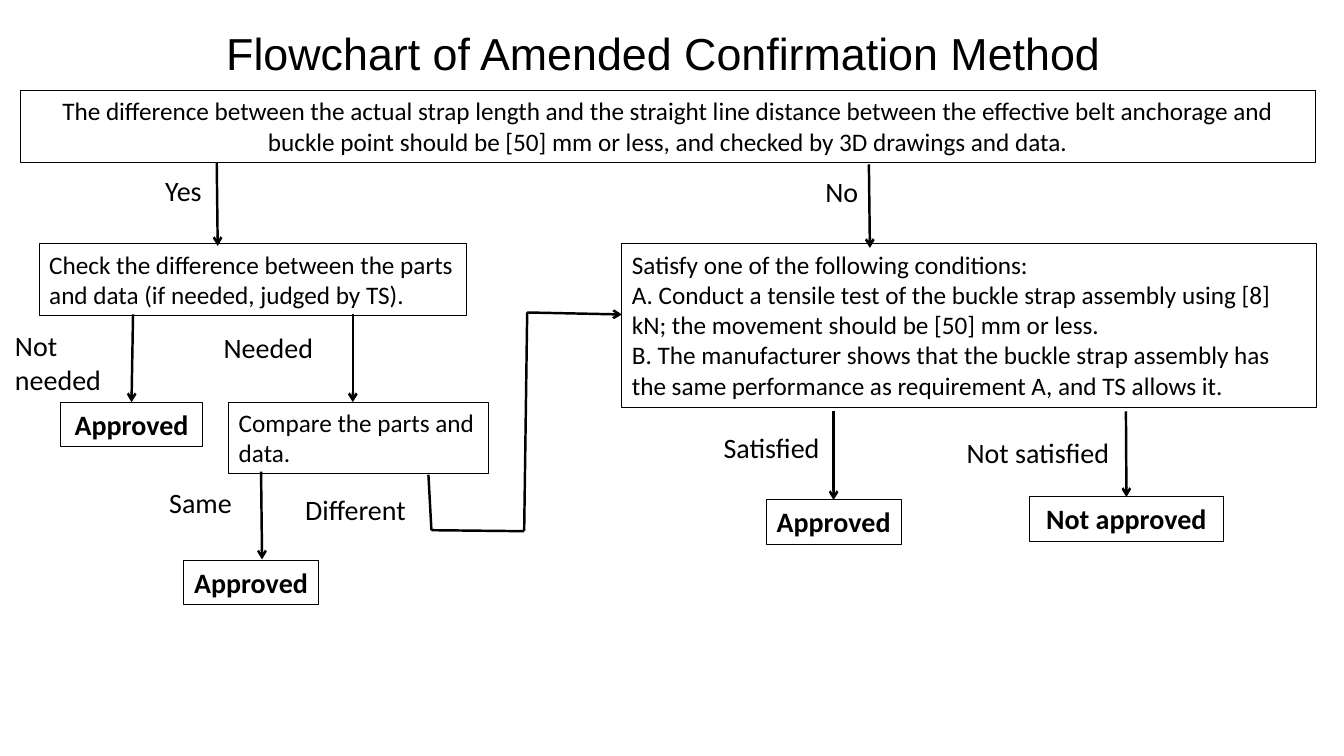
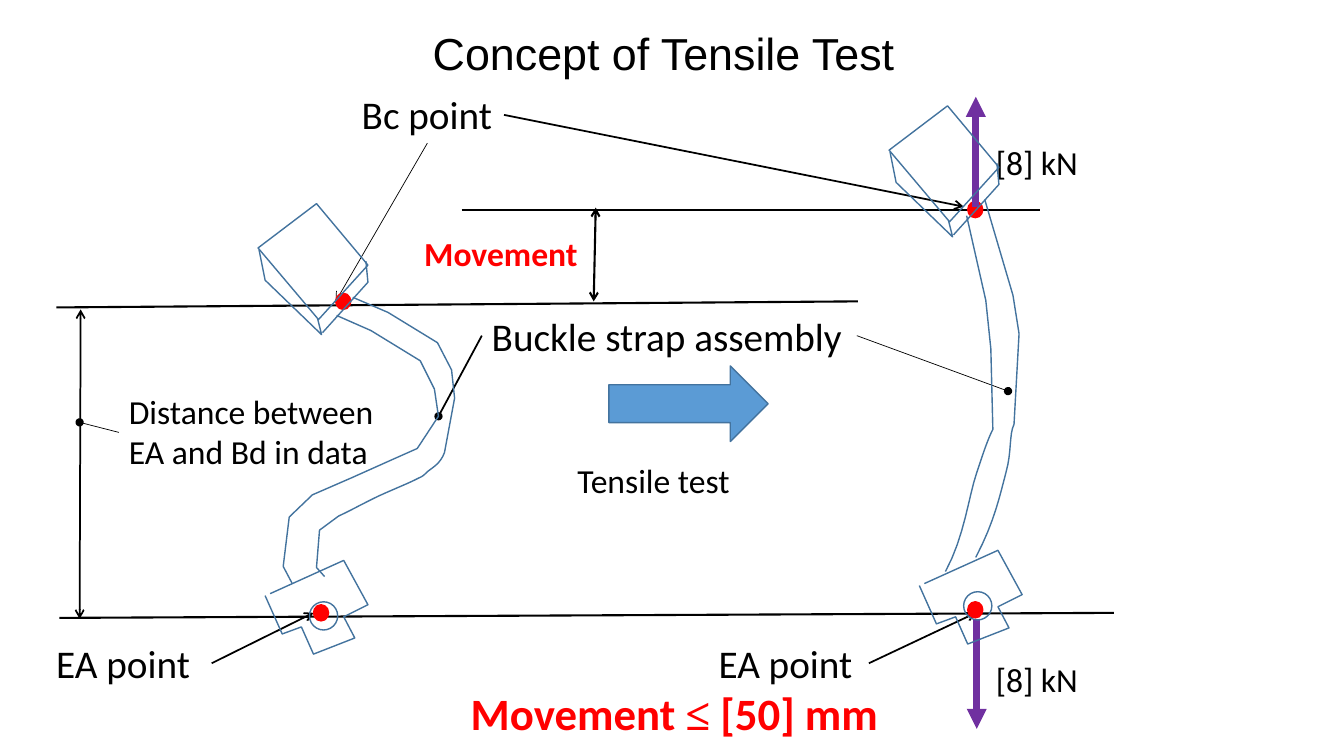
from lxml import etree
from pptx import Presentation
from pptx import util as u
from pptx.dml import color
from pptx.enum import shapes, text
from pptx.oxml import ns

CELL = u.Inches(0.1)
SLIDE_COLUMNS, SLIDE_ROWS = 133.33, 75
TITLE_AREA = (0, 2, 131.7, 6.5)
CURVE_STEPS = 8
COLORS = {
    "ink": "000000",
    "alert": "FF0000",
    "outline": "43739E",
    "progress": "5B9BD5",
    "force": "7030A0",
}
FONTS = {
    "title": {"name": "Arial", "size": u.Pt(32)},
    "step": {"name": "Calibri", "size": u.Pt(18)},
    "answer": {"name": "Calibri", "size": u.Pt(20)},
    "result": {"name": "Calibri", "size": u.Pt(20), "bold": True},
    "note": {"name": "Calibri", "size": u.Pt(24)},
    "part": {"name": "Calibri", "size": u.Pt(28)},
    "movement": {"name": "Calibri", "size": u.Pt(24), "bold": True},
    "limit": {"name": "Calibri", "size": u.Pt(32), "bold": True},
    "sign": {"name": "Times New Roman", "size": u.Pt(32), "bold": True},
}
TOP_FRAME = {"vertical_anchor": text.MSO_ANCHOR.TOP}

BUCKLE = [
    [(25.6, 24.6), (31.6, 31.7), (36.5, 26.3), (31.4, 20.2), (25.6, 24.6)],
    [(25.7, 24.8), (26.3, 27.8), (31.9, 33.2), (31.5, 31.6)],
    [(32, 33), (36.5, 28), (36.3, 25.9)],
]
ANCHOR = [
    (26.8, 58.9), (34.1, 55.6), (36.5, 60), (34.1, 61.2), (35.2, 63.3),
    (31.1, 64.9), (29.9, 62.2), (28, 62.9), (26.3, 59.1),
]
SLACK_STRAP = [
    [(33.4, 31.3), (36.8, 32.8), (41.7, 35.8), (43.1, 38.6), (43.5, 41.3),
     (41.4, 44.5), (38.7, 45.7), (34.9, 47.4), (31, 49.1), (28.7, 51.3),
     (28.1, 56.2), (29, 57.9)],
    [(35, 29.5), (38.5, 31), (43.4, 34), (44.8, 36.7), (45.1, 39.5),
     (44.1, 44.9), (43.7, 46, 42.9, 46.4, 42.4, 46.8),
     (41.9, 47.3, 42, 47.2, 41.2, 47.6), (40.4, 48, 38.9, 48.6, 37.6, 49.2),
     (36.3, 49.8, 34.9, 50.6, 33.6, 51.2), (31.7, 52.6), (31.4, 56.3),
     (32.2, 57.2)],
]
TAUT_STRAP = [
    [(95.9, 21.4), (97.8, 29.8), (98.3, 34.6), (98.5, 42.6),
     (98, 43.6, 97.7, 44.5, 96.9, 46.9), (96.1, 49.2, 95.7, 53.2, 93.8, 56.7)],
    [(97.7, 19.8), (100.5, 29.3), (101.1, 33.1), (100.6, 42.1),
     (100.1, 43.1, 100.4, 44.7, 99.8, 46.9),
     (99.2, 49.1, 98.7, 51.7, 96.8, 55.3)],
]


def cells(*counts):
    return [u.Emu(round(count * CELL)) for count in counts]


def assign(target, values):
    for key, value in values.items():
        setattr(target, key, value)


def rgb(name):
    return color.RGBColor.from_string(COLORS[name])


def write(frame, paragraphs, style, ink="ink", align=text.PP_ALIGN.LEFT):
    for index, content in enumerate(paragraphs):
        paragraph = frame.add_paragraph() if index else frame.paragraphs[0]
        paragraph.alignment = align
        pieces = [(content, style)] if isinstance(content, str) else content
        for words, font_name in pieces:
            run = paragraph.add_run()
            run.text = words
            assign(run.font, FONTS[font_name])
            run.font.color.rgb = rgb(ink)


def paint(figure, fill, line, weight):
    figure.shadow.inherit = False
    if fill:
        figure.fill.solid()
        figure.fill.fore_color.rgb = rgb(fill)
    else:
        figure.fill.background()
    figure.line.color.rgb = rgb(line)
    figure.line.width = u.Pt(weight)


def titled_slide(deck, layout, heading):
    slide = deck.slides.add_slide(layout)
    title = slide.shapes.title
    assign(title.text_frame, {
        "vertical_anchor": text.MSO_ANCHOR.MIDDLE,
        "auto_size": text.MSO_AUTO_SIZE.NONE,
    })
    write(title.text_frame, [heading], "title", align=text.PP_ALIGN.CENTER)
    return slide


def preset(slide, kind, area, fill=None, line="outline", weight=1):
    figure = slide.shapes.add_shape(kind, *cells(*area))
    paint(figure, fill, line, weight)
    return figure


def box(slide, area, paragraphs, style="step", align=text.PP_ALIGN.LEFT):
    step = preset(slide, shapes.MSO_SHAPE.RECTANGLE, area, None, "ink", 0.75)
    assign(step.text_frame, {**TOP_FRAME, "word_wrap": True})
    write(step.text_frame, paragraphs, style, align=align)
    return step


def result(slide, area, words):
    return box(slide, area, [words], "result", text.PP_ALIGN.CENTER)


def label(slide, area, paragraphs, style="answer", ink="ink", wrap=True,
          align=text.PP_ALIGN.LEFT):
    caption = slide.shapes.add_textbox(*cells(*area))
    assign(caption.text_frame, {**TOP_FRAME, "word_wrap": wrap})
    write(caption.text_frame, paragraphs, style, ink, align)


def link(slide, start, end, weight=1.75, tail=None, head=None, ink="ink", target=None):
    connector = slide.shapes.add_connector(
        shapes.MSO_CONNECTOR.STRAIGHT, *cells(*start, *end))
    connector.line.color.rgb = rgb(ink)
    connector.line.width = u.Pt(weight)
    properties = connector.element.spPr
    outline = properties.find(ns.qn("a:ln"))
    for tag, kind in (("a:headEnd", head), ("a:tailEnd", tail)):
        if kind:
            etree.SubElement(outline, ns.qn(tag), type=kind)
    etree.SubElement(properties, ns.qn("a:effectLst"))
    if target:
        connector.end_connect(target, 0)


def curve(start, controls):
    x1, y1, x2, y2, x3, y3 = controls
    for step in range(1, CURVE_STEPS + 1):
        t = step / CURVE_STEPS
        weights = ((1 - t) ** 3, 3 * t * (1 - t) ** 2, 3 * t * t * (1 - t), t ** 3)
        yield tuple(sum(w * p for w, p in zip(weights, axis))
                    for axis in ((start[0], x1, x2, x3), (start[1], y1, y2, y3)))


def sketch(slide, outline, shift=(0, 0)):
    points = [outline[0]]
    for segment in outline[1:]:
        points.extend([segment] if len(segment) == 2 else curve(points[-1], segment))
    placed = [cells(x + shift[0], y + shift[1]) for x, y in points]
    builder = slide.shapes.build_freeform(*placed[0], scale=1.0)
    builder.add_line_segments(placed[1:], close=False)
    paint(builder.convert_to_shape(), None, "outline", 1)


def assembly(slide, strap, buckle_shift, anchor_shift, hole):
    for outline in BUCKLE:
        sketch(slide, outline, buckle_shift)
    for outline in strap:
        sketch(slide, outline)
    sketch(slide, ANCHOR, anchor_shift)
    preset(slide, shapes.MSO_SHAPE.OVAL, (*hole, 2.8, 2.8))


def flowchart(slide):
    box(slide, (2, 9, 128.5, 7.1), [
        "The difference between the actual strap length and the straight line "
        "distance between the effective belt anchorage and buckle point should "
        "be [50] mm or less, and checked by 3D drawings and data.",
    ], align=text.PP_ALIGN.CENTER)
    box(slide, (3.9, 24.2, 42.4, 7.1), [
        "Check the difference between the parts and data (if needed, judged by TS).",
    ])
    box(slide, (22.7, 39.9, 25.8, 7.1), ["Compare the parts and data."])
    box(slide, (61.7, 24.2, 68.9, 16.2), [
        "Satisfy one of the following conditions:",
        "A. Conduct a tensile test of the buckle strap assembly using [8] kN; "
        "the movement should be [50] mm or less.",
        "B. The manufacturer shows that the buckle strap assembly has the same "
        "performance as requirement A, and TS allows it.",
    ])
    unchecked = result(slide, (6, 39.9, 14.1, 4.4), "Approved")
    result(slide, (18.2, 55.6, 13.4, 4.4), "Approved")
    satisfied = result(slide, (76, 49.6, 13.4, 4.4), "Approved")
    rejected = result(slide, (102.1, 49.3, 19.3, 4.4), "Not approved")

    for words, area, wrap in (
        ("Yes", (15.4, 16.7, 5.7, 4.4), False),
        ("No", (80.9, 16.8, 5.3, 4.4), False),
        ("Not needed", (0.5, 32.1, 14.8, 7.7), True),
        ("Needed", (21.2, 32.3, 13.2, 4.4), True),
        ("Same", (15.8, 47.7, 13.3, 4.4), True),
        ("Different", (29.3, 48.4, 13.3, 4.4), True),
        ("Satisfied", (70.8, 42.2, 13.3, 4.4), True),
        ("Not satisfied", (94.9, 42.7, 16.7, 4.4), True),
    ):
        label(slide, area, [words], wrap=wrap)

    for start, end, target in (
        ((21.5, 16.1), (21.6, 24.4), None),
        ((86.2, 16.3), (86.3, 24.6), None),
        ((13.2, 31.2), (13.2, 39.9), unchecked),
        ((35, 31.2), (35, 39.9), None),
        ((25.9, 46.8), (26, 55.5), None),
        ((82.7, 40.8), (82.7, 49.6), satisfied),
        ((111.7, 40.8), (111.7, 49.3), rejected),
        ((52.3, 31), (61.7, 31.2), None),
    ):
        link(slide, start, end, tail="arrow", target=target)
    detour = [(42.5, 47.1), (42.8, 52.6), (52, 52.7), (52.3, 31)]
    for start, end in zip(detour, detour[1:]):
        link(slide, start, end)


def tensile_test(slide):
    for words, area, style, wrap in (
        (["EA point"], (4.6, 62.9, 16.4, 5.7), "part", True),
        (["EA point"], (70.3, 62.9, 15.8, 5.7), "part", True),
        (["Bc point"], (34.9, 8.5, 15.1, 5.7), "part", False),
        (["Buckle strap assembly"], (47.8, 30.5, 37.1, 5.7), "part", False),
        (["Tensile test"], (56.3, 45.1, 17.3, 5), "note", False),
        (["[8] kN"], (97.8, 13.6, 10.2, 5), "note", False),
        (["[8] kN"], (97.8, 64.9, 10.2, 5), "note", False),
        (["Distance between", "EA and Bd in data"], (11.8, 38.3, 27.3, 9.1), "note", False),
    ):
        label(slide, area, words, style, wrap=wrap)
    label(slide, (41.1, 22.6, 17.4, 5), ["Movement"], "movement", "alert", False)
    label(slide, (1.4, 67.5, 131, 6.4),
          [[("Movement ", "limit"), ("≤", "sign"), (" [50] mm", "limit")]],
          "limit", "alert", align=text.PP_ALIGN.CENTER)

    for start, end, weight, tail, head in (
        ((5.9, 61.3), (110.5, 60.8), 1.5, None, None),
        ((5.6, 30.5), (85.1, 29.9), 1.5, None, None),
        ((45.8, 20.8), (103.2, 20.8), 1.5, None, None),
        ((59.1, 20.6), (58.9, 29.9), 1.5, "arrow", "arrow"),
        ((8, 30.7), (7.9, 61.4), 1.25, "arrow", "arrow"),
        ((42.4, 14.2), (33.3, 29.9), 0.5, "arrow", None),
        ((50, 11.4), (95.6, 20.5), 1.25, "arrow", None),
        ((21, 65.8), (31.1, 60.8), 1.25, "arrow", None),
        ((86.2, 65.8), (96.8, 60.8), 1.25, "arrow", None),
        ((85, 33.3), (100, 38.8), 0.5, "oval", None),
        ((47.8, 33.3), (43.5, 41.3), 1.25, "oval", None),
        ((11.8, 42.9), (7.9, 41.9), 0.5, "oval", None),
    ):
        link(slide, start, end, weight, tail, head)

    for corner in ((31.1, 60), (33.3, 29.1), (96, 59.7), (96, 20)):
        preset(slide, shapes.MSO_SHAPE.OVAL, (*corner, 1.5, 1.6), "alert", "alert")
    preset(slide, shapes.MSO_SHAPE.RIGHT_ARROW, (60.4, 36.3, 15.8, 7.5), "progress")
    for start, end in (((96.9, 61.4), (96.9, 72.3)), ((96.8, 20.5), (96.8, 9.6))):
        link(slide, start, end, 4.75, "triangle", ink="force")
    assembly(slide, SLACK_STRAP, (0, 0), (0, 0), (30.7, 59.7))
    assembly(slide, TAUT_STRAP, (62.6, -9.7), (64.9, -1), (95.6, 58.7))


def main():
    deck = Presentation()
    deck.slide_width, deck.slide_height = cells(SLIDE_COLUMNS, SLIDE_ROWS)
    layout = deck.slide_layouts.get_by_name("Title Only")
    sides = ("left", "top", "width", "height")
    assign(layout.placeholders[0], dict(zip(sides, cells(*TITLE_AREA))))
    flowchart(titled_slide(deck, layout, "Flowchart of Amended Confirmation Method"))
    tensile_test(titled_slide(deck, layout, "Concept of Tensile Test"))
    deck.save("out.pptx")


if __name__ == "__main__":
    main()
